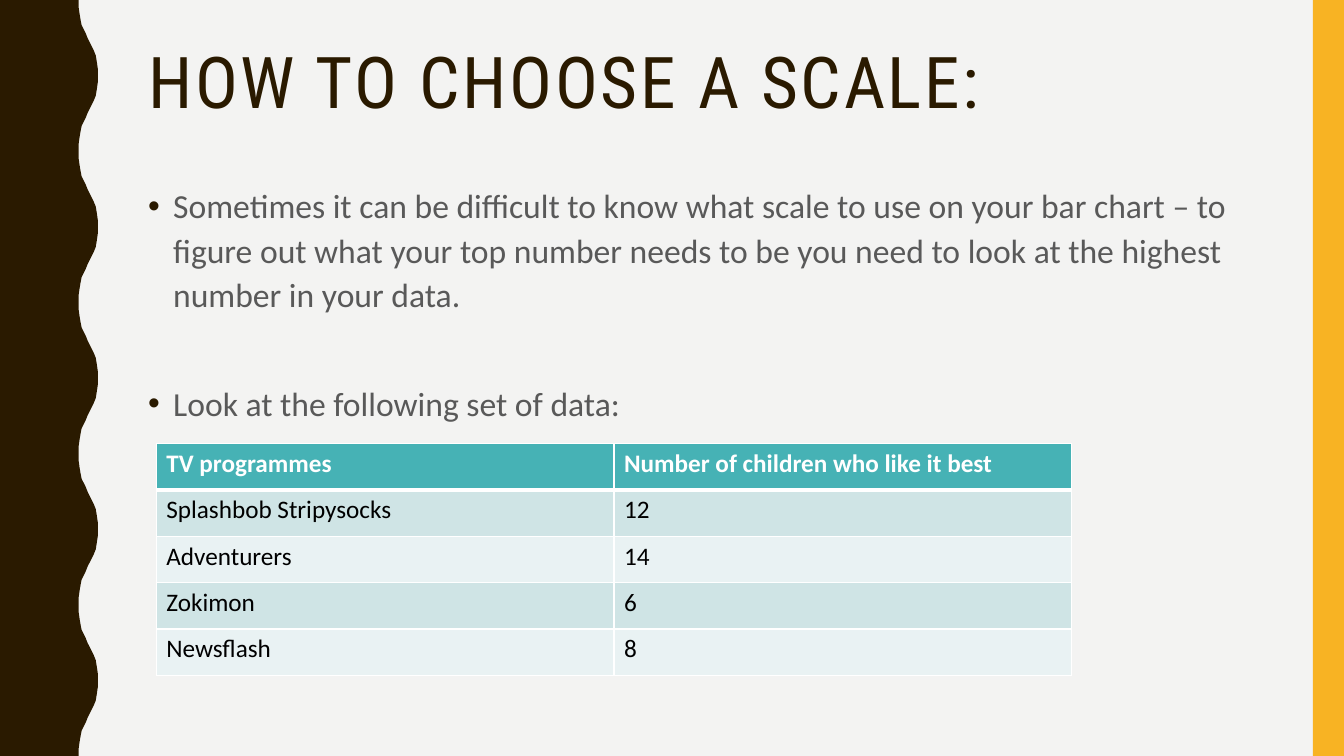
import pptx
import pptx.util
import pptx.dml.color
import pptx.enum.shapes
import pptx.enum.text
import pptx.oxml
import pptx.oxml.ns
from lxml import etree

Inches = pptx.util.Inches
Pt = pptx.util.Pt
RGBColor = pptx.dml.color.RGBColor

PAPER = RGBColor(0xF3, 0xF3, 0xF2)
BROWN = RGBColor(0x2A, 0x1A, 0x00)
GOLD = RGBColor(0xF8, 0xB3, 0x23)
GREY = RGBColor(0x59, 0x59, 0x59)
TEAL = RGBColor(0x46, 0xB2, 0xB5)
BAND_DARK = RGBColor(0xCF, 0xE4, 0xE5)
BAND_LIGHT = RGBColor(0xE9, 0xF2, 0xF3)
WHITE = RGBColor(0xFF, 0xFF, 0xFF)
BLACK = RGBColor(0x00, 0x00, 0x00)

HEADING_FONT = "Roboto Condensed"
BODY_FONT = "Calibri"

# Half a wave of the left edge, in hundredths of an inch
HALF_WAVE = [(78, 0), (78, 7), (79, 14), (80, 20), (81, 25), (83, 29), (85, 33),
             (87, 38), (89, 42), (91, 46), (93, 50), (95, 55), (96, 61), (97, 68),
             (97, 75)]
WAVE_LENGTH = 150
WAVE_COUNT = 5

BULLETS = [
    ("Sometimes it can be difficult to know what scale to use on your bar chart – "
     "to figure out what your top number needs to be you need to look at the "
     "highest number in your data.", 7),
    ("Look at the following set of data:", 46),
]
TABLE_ROWS = [
    ("TV programmes", "Number of children who like it best"),
    ("Splashbob Stripysocks", "12"),
    ("Adventurers", "14"),
    ("Zokimon", "6"),
    ("Newsflash", "8"),
]


def paint(sp, color):
    sp.fill.solid()
    sp.fill.fore_color.rgb = color
    sp.line.fill.background()
    sp.shadow.inherit = False


def style_run(r, font, size, color, bold=False):
    r.font.name = font
    r.font.size = Pt(size)
    r.font.color.rgb = color
    r.font.bold = bold


def add_wavy_edge(s):
    wave = HALF_WAVE + [(x, WAVE_LENGTH - y) for x, y in HALF_WAVE[-2::-1]]
    points = [(x, y + i * WAVE_LENGTH) for i in range(WAVE_COUNT) for x, y in wave]
    builder = s.shapes.build_freeform(0, 0, scale=Inches(0.01))
    builder.add_line_segments(points + [(0, WAVE_COUNT * WAVE_LENGTH)], close=True)
    paint(builder.convert_to_shape(), BROWN)


def add_side_bar(s):
    sp = s.shapes.add_shape(pptx.enum.shapes.MSO_SHAPE.RECTANGLE,
                            Inches(13.02), 0, Inches(0.31), Inches(7.5))
    paint(sp, GOLD)


def add_text_frame(s, top, height):
    sp = s.shapes.add_textbox(Inches(1.37), Inches(top), Inches(11.13), Inches(height))
    tf = sp.text_frame
    tf.word_wrap = True
    tf.vertical_anchor = pptx.enum.text.MSO_ANCHOR.TOP
    return tf


def add_title(s, text):
    p = add_text_frame(s, 0.42, 1.63).paragraphs[0]
    p.text = text
    p.line_spacing = 0.9
    r = p.runs[0]
    style_run(r, HEADING_FONT, 51, BROWN)
    r.font._element.set("spc", "200")


def set_bullet(p, color):
    pPr = p._p.get_or_add_pPr()
    pPr.set("marL", str(Inches(0.25)))
    pPr.set("indent", str(-Inches(0.25)))
    qn = pptx.oxml.ns.qn
    bu_color = etree.SubElement(pPr, qn("a:buClr"))
    etree.SubElement(bu_color, qn("a:srgbClr")).set("val", str(color))
    etree.SubElement(pPr, qn("a:buFont")).set("typeface", "Arial")
    etree.SubElement(pPr, qn("a:buChar")).set("char", "•")


def add_bullets(s, bullets):
    tf = add_text_frame(s, 1.75, 4.68)
    for i, (text, space_before) in enumerate(bullets):
        p = tf.add_paragraph() if i else tf.paragraphs[0]
        p.text = text
        p.line_spacing = 1.1
        p.space_before = Pt(space_before)
        set_bullet(p, BROWN)
        style_run(p.runs[0], BODY_FONT, 24, GREY)


def set_borders(cell, color, bottom_width):
    tcPr = cell._tc.get_or_add_tcPr()
    qn = pptx.oxml.ns.qn
    for side, width in (("L", 1), ("R", 1), ("T", 1), ("B", bottom_width)):
        ln = etree.SubElement(tcPr, qn("a:ln" + side))
        ln.set("w", str(Pt(width)))
        fill = etree.SubElement(ln, qn("a:solidFill"))
        etree.SubElement(fill, qn("a:srgbClr")).set("val", str(color))


def add_data_table(s, rows):
    row_height = Inches(0.46)
    table = s.shapes.add_table(len(rows), 2, Inches(1.55), Inches(4.4),
                               Inches(9.08), row_height * len(rows)).table
    table.horz_banding = False
    for col in table.columns:
        col.width = Inches(4.54)
    for i, values in enumerate(rows):
        header = i == 0
        table.rows[i].height = row_height
        band = TEAL if header else BAND_DARK if i % 2 else BAND_LIGHT
        for j, value in enumerate(values):
            cell = table.cell(i, j)
            # The thick rule under the header is shared by the row below
            set_borders(cell, WHITE, 3 if header else 1)
            cell.fill.solid()
            cell.fill.fore_color.rgb = band
            cell.text = value
            style_run(cell.text_frame.paragraphs[0].runs[0], BODY_FONT, 18,
                      WHITE if header else BLACK, header)


def main():
    prs = pptx.Presentation()
    prs.slide_width = Inches(13.33)
    prs.slide_height = Inches(7.5)
    s = prs.slides.add_slide(prs.slide_layouts[6])

    # Background and side decoration
    s.background.fill.solid()
    s.background.fill.fore_color.rgb = PAPER
    add_wavy_edge(s)
    add_side_bar(s)

    # Content
    add_title(s, "HOW TO CHOOSE A SCALE:")
    add_bullets(s, BULLETS)
    add_data_table(s, TABLE_ROWS)

    prs.save("out.pptx")


if __name__ == "__main__":
    main()
